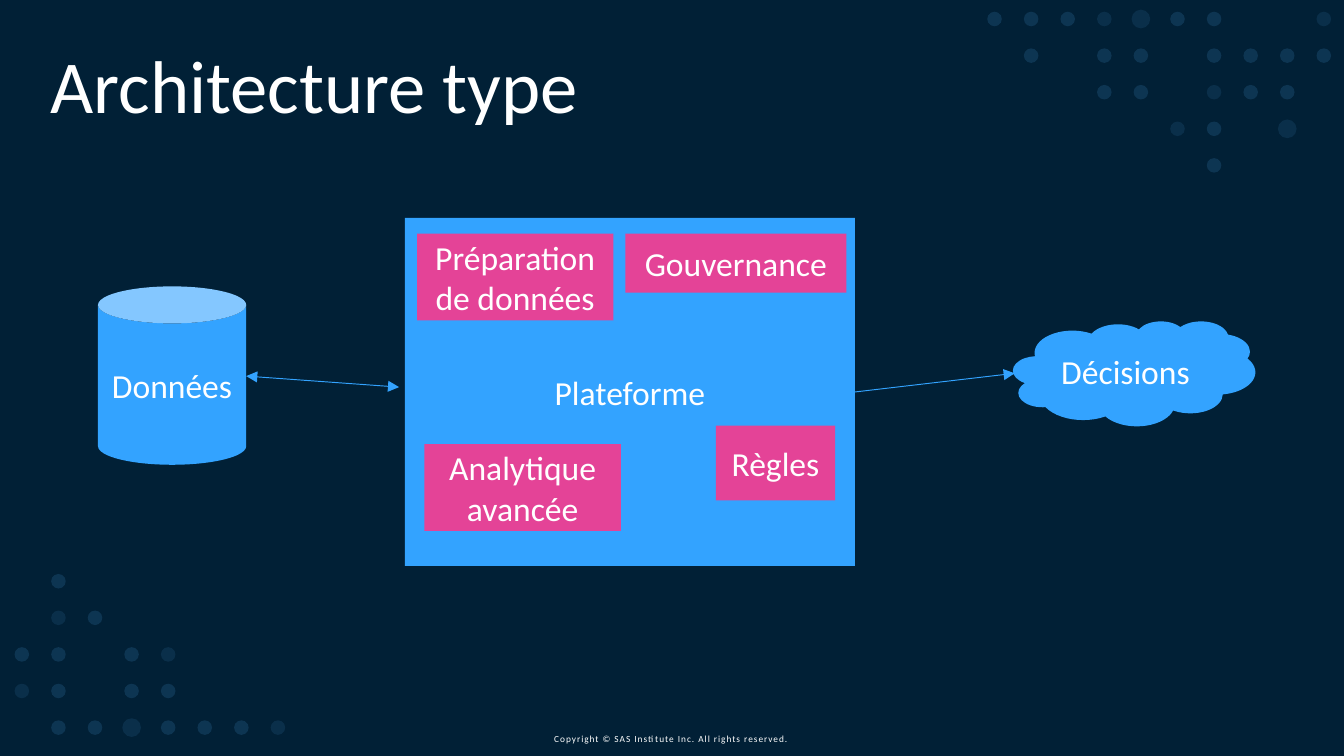
"""Build the "Architecture type" slide: data, platform and decisions flow."""
import pptx
import pptx.dml.color
import pptx.enum.shapes
import pptx.enum.text
import pptx.oxml.ns
import pptx.oxml.xmlchemy
import pptx.util

Pt = pptx.util.Pt
RGBColor = pptx.dml.color.RGBColor
SHAPE = pptx.enum.shapes.MSO_SHAPE
ANCHOR = pptx.enum.text.MSO_ANCHOR
ALIGN = pptx.enum.text.PP_ALIGN
GROW = pptx.enum.text.MSO_AUTO_SIZE.SHAPE_TO_FIT_TEXT

NAVY = RGBColor(0x01, 0x20, 0x36)
BLUE = RGBColor(0x33, 0xA3, 0xFF)
PINK = RGBColor(0xE4, 0x43, 0x97)
PALE = RGBColor(0x5C, 0xB5, 0xFF)
WHITE = RGBColor(0xFF, 0xFF, 0xFF)

TITLE = "Architecture type"
COPYRIGHT = "Copyright © SAS Institute Inc. All rights reserved."

NODES = [
    ("Données", SHAPE.CAN, BLUE, (52.5, 153.4, 79.4, 95.6)),
    ("Plateforme", SHAPE.RECTANGLE, BLUE, (216.9, 116.8, 241.1, 186.4)),
    ("Décisions", SHAPE.CLOUD, BLUE, (542.7, 172, 129.8, 56.2)),
    ("Préparation de données", SHAPE.RECTANGLE, PINK, (223.4, 125.2, 105.2, 46.5)),
    ("Gouvernance", SHAPE.RECTANGLE, PINK, (335, 125.2, 118.5, 31.6)),
    ("Règles", SHAPE.RECTANGLE, PINK, (383.5, 228, 64, 40.2)),
    ("Analytique avancée", SHAPE.RECTANGLE, PINK, (227.4, 238, 105.2, 46.5)),
]

ARROWS = [
    ((458, 210, 543.6, 200), ["tailEnd"]),
    ((213.8, 207.4, 131.9, 201.5), ["headEnd", "tailEnd"]),
]

DOT_PITCH = 19.6
DOT_KINDS = {"#": (7.8, 14), "o": (7.8, 10), "O": (10, 10)}
DOT_GRIDS = [
    ((532.8, 10.2), ["###oO##..o", ".#.##.####", "...##.o##.", ".....o#.O.", "......#..."]),
    ((11.7, 311.4), [".#......", ".o#.....", "##.#o...", "o#.##...", ".##O###o"]),
]


def assign(obj, values):
    """Set every attribute named in values."""
    for name, value in values.items():
        setattr(obj, name, value)


def find(element, tag):
    """Return the first descendant with the given prefixed tag."""
    return element.find(".//" + pptx.oxml.ns.qn(tag))


def append(parent, tag, **attributes):
    """Append a new XML element with the given attributes."""
    child = pptx.oxml.xmlchemy.OxmlElement(tag)
    for name, value in attributes.items():
        child.set(name, value)
    parent.append(child)


def write(sp, text, size, frame, align):
    """Put one formatted paragraph into a shape."""
    tf = sp.text_frame
    assign(tf, frame)
    p = tf.paragraphs[0]
    p.alignment = align
    r = p.add_run()
    r.text = text
    assign(r.font, {"name": "Calibri", "size": Pt(size)})
    r.font.color.rgb = WHITE


def add_filled(s, kind, box, color):
    """Add a preset shape with a plain fill and no outline or shadow."""
    sp = s.shapes.add_shape(kind, *map(Pt, box))
    sp.shadow.inherit = False
    sp.fill.solid()
    sp.fill.fore_color.rgb = color
    sp.line.fill.background()
    return sp


def add_dots(s, origin, rows):
    """Draw a grid of translucent dots from a text pattern."""
    for j, row in enumerate(rows):
        for i, mark in enumerate(row):
            if mark not in DOT_KINDS:
                continue
            size, opacity = DOT_KINDS[mark]
            left = origin[0] + i * DOT_PITCH - size / 2
            top = origin[1] + j * DOT_PITCH - size / 2
            sp = add_filled(s, SHAPE.OVAL, (left, top, size, size), PALE)
            append(find(sp.element.spPr, "a:srgbClr"), "a:alpha", val=str(opacity * 1000))


def add_arrow(s, ends, heads):
    """Add a thin straight connector with triangle heads."""
    line = s.shapes.add_connector(pptx.enum.shapes.MSO_CONNECTOR.STRAIGHT, *map(Pt, ends))
    line.line.color.rgb = BLUE
    line.line.width = Pt(0.5)
    for tag in heads:
        append(find(line.element, "a:ln"), "a:" + tag, type="triangle")
    append(line.element.spPr, "a:effectLst")


def main():
    prs = pptx.Presentation()
    assign(prs, {"slide_width": Pt(720), "slide_height": Pt(405)})
    s = prs.slides.add_slide(prs.slide_layouts[5])
    s.background.fill.solid()
    s.background.fill.fore_color.rgb = NAVY

    for origin, rows in DOT_GRIDS:
        add_dots(s, origin, rows)

    title = s.shapes.title
    assign(title, {"left": Pt(20), "top": Pt(17.4), "width": Pt(620.6), "height": Pt(55.6)})
    write(title, TITLE, 40,
          {"word_wrap": True, "auto_size": GROW, "vertical_anchor": ANCHOR.TOP}, ALIGN.LEFT)

    for text, kind, color, box in NODES:
        sp = add_filled(s, kind, box, color)
        write(sp, text, 18,
              {"word_wrap": " " in text, "vertical_anchor": ANCHOR.MIDDLE}, ALIGN.CENTER)

    for ends, heads in ARROWS:
        add_arrow(s, ends, heads)

    footer = s.shapes.add_textbox(Pt(260.6), Pt(388.8), Pt(198), Pt(13.4))
    write(footer, COPYRIGHT, 5,
          {"word_wrap": True, "auto_size": GROW, "vertical_anchor": ANCHOR.BOTTOM},
          ALIGN.CENTER)
    find(footer.element, "a:rPr").set("spc", "50")

    prs.save("out.pptx")


if __name__ == "__main__":
    main()
